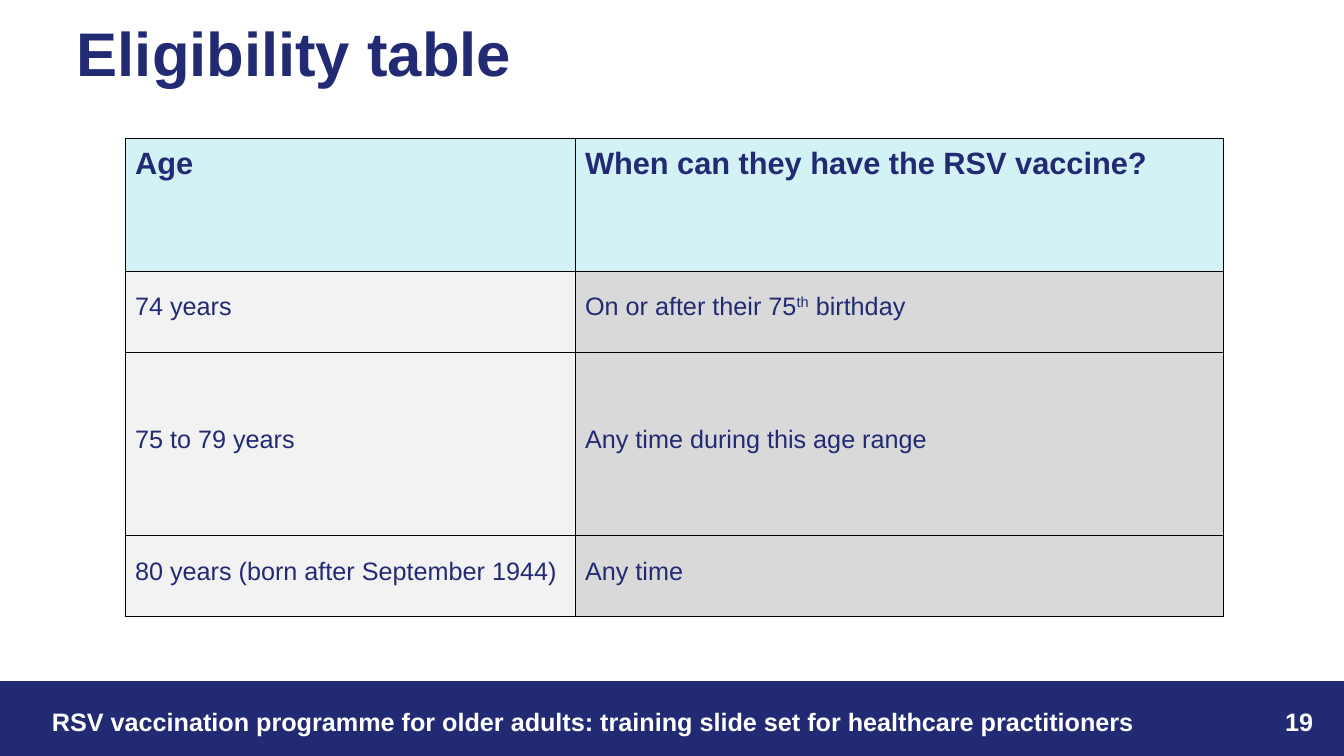
from lxml import etree
from pptx import Presentation
from pptx import util as u
from pptx.dml.color import RGBColor
from pptx.enum import shapes, text
from pptx.oxml.ns import qn

EMU_PER_PX = 914400 / 100.8
FONT = "Arial"
COLORS = {
    "navy": "212A73",
    "white": "FFFFFF",
    "black": "000000",
    "header": "D3F2F6",
    "age": "F2F2F2",
    "timing": "D9D9D9",
}
COLUMNS = [450, 649]
ROW_HEIGHTS = [133, 81, 184, 81]
ROWS = [
    ["Age", "When can they have the RSV vaccine?"],
    ["74 years", [("On or after their 75", 0), ("th", 30000), (" birthday", 0)]],
    ["75 to 79 years", "Any time during this age range"],
    ["80 years (born after September 1944)", "Any time"],
]


def px(n):
    return u.Emu(round(n * EMU_PER_PX))


def rgb(name):
    return RGBColor.from_string(COLORS[name])


def write(tf, content, size=18, color="navy", bold=False, align=text.PP_ALIGN.LEFT, spacing=None):
    p = tf.paragraphs[0]
    p.alignment = align
    p.line_spacing = spacing
    runs = [(content, 0)] if isinstance(content, str) else content
    for words, baseline in runs:
        r = p.add_run()
        r.text = words
        r.font.name = FONT
        r.font.size = u.Pt(size)
        r.font.bold = bold
        r.font.color.rgb = rgb(color)
        if baseline:
            r.font._element.set("baseline", str(baseline))


def add_text(s, box, content, **fmt):
    tf = s.shapes.add_textbox(*map(px, box)).text_frame
    tf.word_wrap = True
    tf.vertical_anchor = text.MSO_ANCHOR.MIDDLE
    write(tf, content, **fmt)


def add_borders(cell):
    tcPr = cell._tc.get_or_add_tcPr()
    for i, side in enumerate(("lnL", "lnR", "lnT", "lnB")):
        ln = etree.Element(qn("a:" + side), w=str(u.Pt(0.75)))
        fill = etree.SubElement(ln, qn("a:solidFill"))
        etree.SubElement(fill, qn("a:srgbClr"), val=COLORS["black"])
        tcPr.insert(i, ln)


def add_title(s, x, y, w, h):
    add_text(s, (x, y, w, h), "Eligibility table", size=44, bold=True, spacing=0.9)


def add_eligibility_table(s, x, y):
    frame = s.shapes.add_table(
        len(ROWS), len(COLUMNS), px(x), px(y), px(sum(COLUMNS)), px(sum(ROW_HEIGHTS))
    )
    table = frame.table
    for column, width in zip(table.columns, COLUMNS):
        column.width = px(width)
    for row, height in zip(table.rows, ROW_HEIGHTS):
        row.height = px(height)
    for i, row in enumerate(ROWS):
        header = i == 0
        for j, content in enumerate(row):
            cell = table.cell(i, j)
            cell.fill.solid()
            cell.fill.fore_color.rgb = rgb("header" if header else ("age", "timing")[j])
            if header:
                cell.margin_top = px(24)
            else:
                cell.vertical_anchor = text.MSO_ANCHOR.MIDDLE
            write(cell.text_frame, content, size=22 if header else 18,
                  bold=header, spacing=u.Pt(13.5))
            add_borders(cell)


def add_footer(s, x, y, w, h):
    sp = s.shapes.add_shape(shapes.MSO_SHAPE.RECTANGLE, *map(px, (x, y, w, h)))
    sp.shadow.inherit = False
    sp.fill.solid()
    sp.fill.fore_color.rgb = rgb("navy")
    sp.line.color.rgb = rgb("navy")
    sp.line.width = u.Pt(1)
    add_text(s, (x + w - 323, y + 19, 302, 40), "19",
             color="white", bold=True, align=text.PP_ALIGN.RIGHT)
    add_text(s, (x + 42, y + 19, 1130, 40),
             "RSV vaccination programme for older adults: "
             "training slide set for healthcare practitioners",
             color="white", bold=True)


def main():
    prs = Presentation()
    prs.slide_width, prs.slide_height = px(1344), px(756)
    s = prs.slides.add_slide(prs.slide_layouts[6])
    add_footer(s, 0, 682, 1344, 74)
    add_title(s, 67, 15, 1159, 83)
    add_eligibility_table(s, 125, 138)
    prs.save("out.pptx")


if __name__ == "__main__":
    main()
